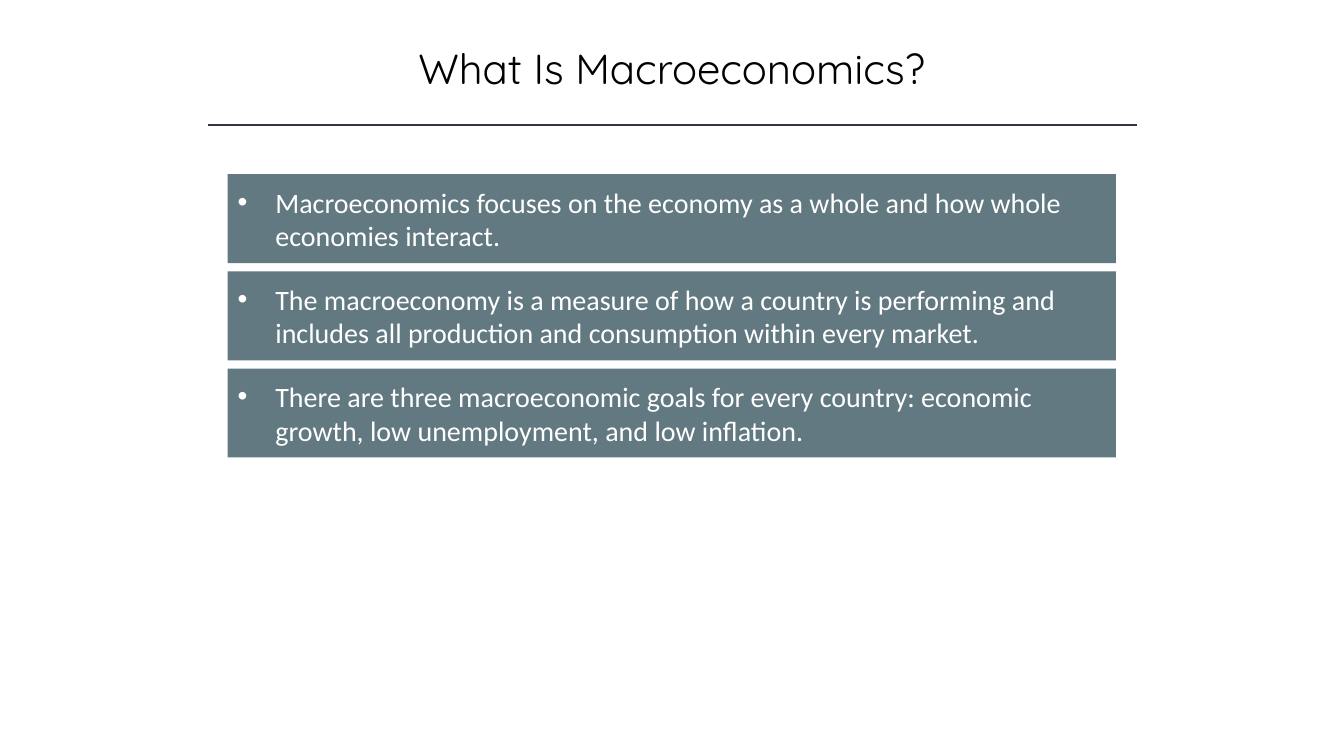
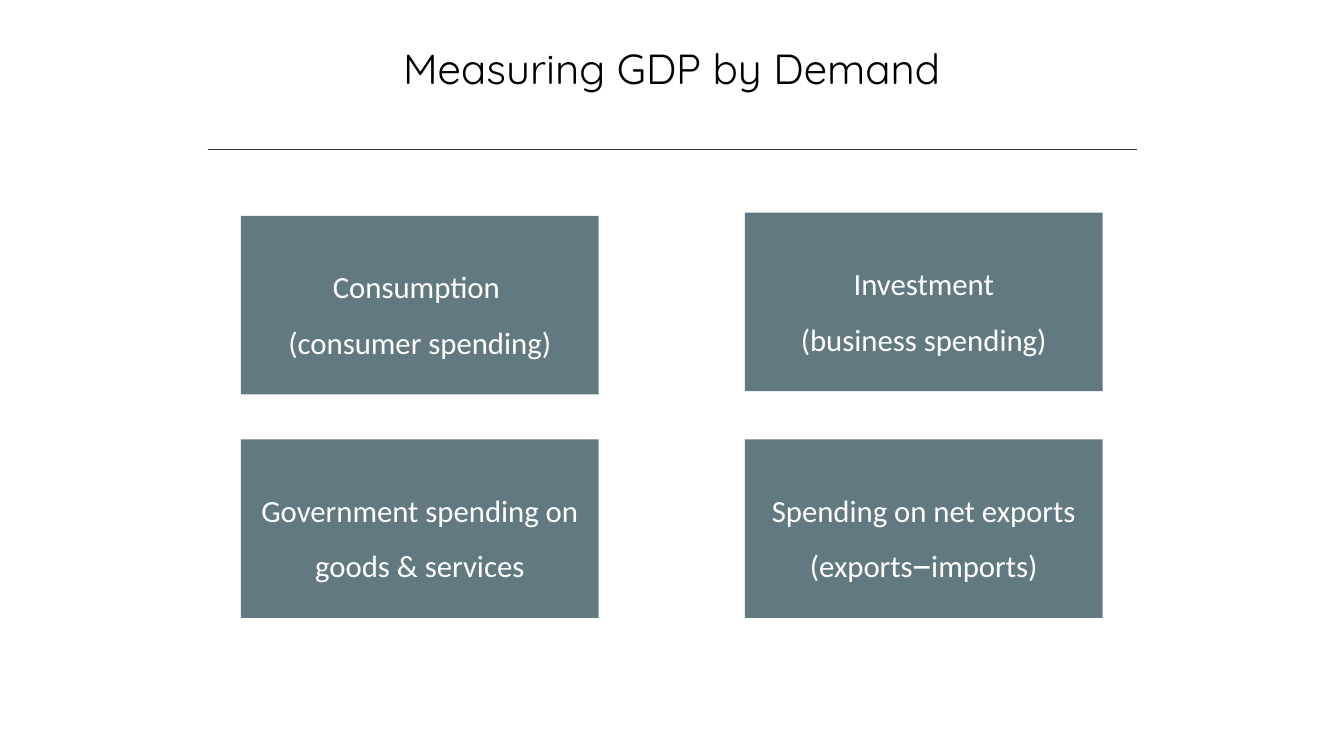
from lxml import etree
from pptx import Presentation
from pptx import util as u
from pptx.dml.color import RGBColor
from pptx.enum import shapes, text
from pptx.oxml.ns import qn

SLATE, RULE, INK, WHITE = "627981", "323542", "000000", "FFFFFF"
HEAD, BODY, SIGN = "Quicksand", "Calibri", "DejaVu Sans Mono"

GOALS = [
    "Macroeconomics focuses on the economy as a whole and how whole economies interact.",
    "The macroeconomy is a measure of how a country is performing and includes all "
    "production and consumption within every market.",
    "There are three macroeconomic goals for every country: economic growth, "
    "low unemployment, and low inflation.",
]
LEFT, RIGHT = 6.07, 18.77
PARTS = [
    (LEFT, 5.44, ["Consumption ", "(consumer spending)"]),
    (RIGHT, 5.36, ["Investment", "(business spending)"]),
    (LEFT, 11.07, ["Government spending on goods & services"]),
    (RIGHT, 11.07, ["Spending on net exports (exports−imports)"]),
]


def paint(target, color):
    if hasattr(target, "solid"):
        target.solid()
        target = target.fore_color
    target.rgb = RGBColor.from_string(color)


def style(run, font, size, color):
    run.font.name = font
    run.font.size = u.Pt(size)
    paint(run.font.color, color)


def place(shape, left, top, width, height):
    shape.left, shape.top = u.Cm(left), u.Cm(top)
    shape.width, shape.height = u.Cm(width), u.Cm(height)


def start(deck, title, rule):
    slide = deck.slides.add_slide(deck.slide_layouts[5])
    head = slide.shapes.title
    place(head, 4.23, 0.94, 25.4, 1.55)
    frame = head.text_frame
    frame.text = title
    frame.vertical_anchor = text.MSO_ANCHOR.MIDDLE
    para = frame.paragraphs[0]
    para.alignment = text.PP_ALIGN.CENTER
    style(para.runs[0], HEAD, 30, INK)

    line = slide.shapes.add_connector(
        shapes.MSO_CONNECTOR.STRAIGHT, u.Cm(5.23), u.Cm(rule), u.Cm(28.65), u.Cm(rule))
    paint(line.line.fill, RULE)
    line.line.width = u.Pt(1)
    etree.SubElement(line.element.spPr, qn("a:effectLst"))
    return slide


def box(slide, left, top, width, height, lines, size):
    shape = slide.shapes.add_shape(
        shapes.MSO_SHAPE.RECTANGLE, u.Cm(left), u.Cm(top), u.Cm(width), u.Cm(height))
    shape.shadow.inherit = False
    paint(shape.fill, SLATE)
    shape.line.fill.background()
    frame = shape.text_frame
    frame.word_wrap = True
    frame.vertical_anchor = text.MSO_ANCHOR.MIDDLE
    frame.text = "\n".join(lines)
    for para in frame.paragraphs:
        before, sign, after = para.text.partition("−")
        para.runs[0].text = before
        style(para.runs[0], BODY, size, WHITE)
        for piece, font in ((sign, SIGN), (after, BODY)):
            if piece:
                run = para.add_run()
                run.text = piece
                style(run, font, size, WHITE)
    return frame


def bullet(para):
    para.alignment = text.PP_ALIGN.LEFT
    props = para._p.get_or_add_pPr()
    indent = u.Cm(0.95)
    props.set("marL", str(indent))
    props.set("indent", str(-indent))
    etree.SubElement(props, qn("a:buFont")).set("typeface", "Arial")
    etree.SubElement(props, qn("a:buChar")).set("char", "•")


def goals(deck):
    slide = start(deck, "What Is Macroeconomics?", 3.15)
    for row, goal in enumerate(GOALS):
        frame = box(slide, 5.74, 4.39 + row * 2.45, 22.38, 2.24, [goal], 20)
        frame.margin_right = u.Cm(0.9)
        bullet(frame.paragraphs[0])


def demand(deck):
    slide = start(deck, "Measuring GDP by Demand", 3.76)
    for left, top, lines in PARTS:
        frame = box(slide, left, top, 9.02, 4.5, lines, 22)
        for para in frame.paragraphs:
            para.alignment = text.PP_ALIGN.CENTER
            para.line_spacing = 1.5


def main():
    deck = Presentation()
    deck.slide_width, deck.slide_height = u.Cm(33.87), u.Cm(19.05)
    goals(deck)
    demand(deck)
    deck.save("out.pptx")


if __name__ == "__main__":
    main()
